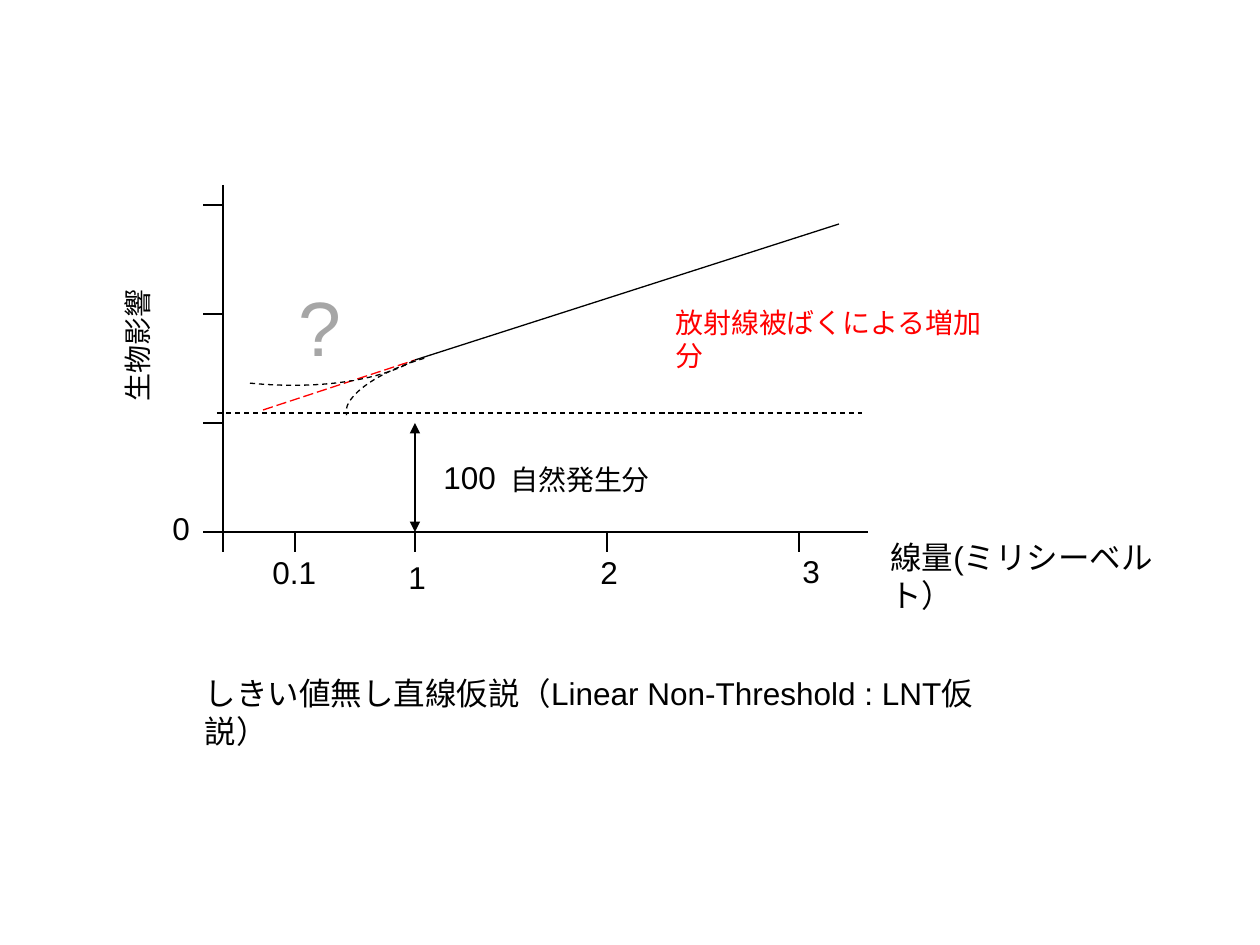
from dataclasses import dataclass

from lxml.etree import SubElement
from pptx import Presentation
from pptx.dml.color import RGBColor
from pptx.enum.dml import MSO_LINE
from pptx.enum.shapes import MSO_CONNECTOR, MSO_SHAPE
from pptx.enum.text import MSO_ANCHOR, MSO_AUTO_SIZE, PP_ALIGN
from pptx.oxml.ns import qn
from pptx.util import Emu, Pt


@dataclass(frozen=True)
class Theme:
    font: str = "Arial"
    ink: str = "000000"
    accent: str = "FF0000"
    muted: str = "A6A6A6"
    paper: str = "FFFFFF"
    label: int = 18
    note: int = 16
    mark: int = 44
    stroke: float = 0.75


THEME = Theme()
PX_PER_INCH = 126
X0, Y0 = 223, 532           # chart origin
X_END, Y_END = 868, 185     # ends of the axes
Y_STEP, X_STEP = 109, 192   # distance between ticks
X_ONE = 415                 # position of 1 on the dose axis
TICK = 20
LABEL_H, NOTE_H = 50, 47


def px(n):
    return Emu(round(n * 914400 / PX_PER_INCH))


def set_attrs(obj, values):
    for name, value in values.items():
        setattr(obj, name, value)


def style_line(line, color=THEME.ink, dash=None):
    line.color.rgb = RGBColor.from_string(color)
    set_attrs(line, {"width": Pt(THEME.stroke), "dash_style": dash})


def write(shape, text, size=THEME.label, color=THEME.ink, wrap=False,
          align=PP_ALIGN.LEFT, anchor=MSO_ANCHOR.TOP):
    tf = shape.text_frame
    set_attrs(tf, {"word_wrap": wrap, "vertical_anchor": anchor,
                   "auto_size": MSO_AUTO_SIZE.SHAPE_TO_FIT_TEXT})
    p = tf.paragraphs[0]
    p.alignment = align
    r = p.add_run()
    r.text = text
    set_attrs(r.font, {"name": THEME.font, "size": Pt(size)})
    r.font.color.rgb = RGBColor.from_string(color)


def add_label(shapes, text, box, rotation=0, **style):
    tb = shapes.add_textbox(*map(px, box))
    tb.rotation = rotation
    write(tb, text, **style)


def add_line(shapes, start, end, arrows=False, **style):
    line = shapes.add_connector(MSO_CONNECTOR.STRAIGHT, *map(px, start + end))
    style_line(line.line, **style)
    sp_pr = line._element.spPr
    if arrows:
        for tag in ("a:headEnd", "a:tailEnd"):
            SubElement(sp_pr.find(qn("a:ln")), qn(tag), type="triangle")
    SubElement(sp_pr, qn("a:effectLst"))


def add_outline(shapes, kind, box, rotation=0, **style):
    sp = shapes.add_shape(kind, *map(px, box))
    sp.rotation = rotation
    sp.shadow.inherit = False
    sp.fill.background()
    style_line(sp.line, **style)
    return sp


def add_axes(shapes):
    add_line(shapes, (X0, Y_END), (X0, Y0))
    add_line(shapes, (X0, Y0), (X_END, Y0))
    for i in range(4):
        y = Y0 - i * Y_STEP
        add_line(shapes, (X0, y), (X0 - TICK, y))
    for x in (X0, 295, *(X_ONE + i * X_STEP for i in range(3))):
        add_line(shapes, (x, Y0), (x, Y0 + TICK))

    # Axis numbers and titles
    for text, x, y, w in (("0", 160, 503, 43), ("0.1", 260, 547, 69),
                          ("1", 396, 552, 43), ("2", 588, 547, 43),
                          ("3", 790, 546, 43)):
        add_label(shapes, text, (x, y, w, LABEL_H))
    add_label(shapes, "生物影響", (68, 321, 139, NOTE_H), rotation=270, size=THEME.note)
    add_label(shapes, "線量(ミリシーベルト）", (878, Y0, 299, LABEL_H), wrap=True)


def add_natural_level(shapes):
    add_line(shapes, (217, 413), (862, 413), dash=MSO_LINE.DASH)
    add_line(shapes, (X_ONE, Y0 - Y_STEP), (X_ONE, Y0), arrows=True)
    add_label(shapes, "100", (431, 452, 78, LABEL_H))
    add_label(shapes, "自然発生分", (498, 456, 165, NOTE_H), size=THEME.note)


def add_dose_response(shapes):
    # Known straight part and its extension to low doses
    knee = (X_ONE, 360)
    add_line(shapes, knee, (839, 224))
    add_line(shapes, (263, 410), knee, color=THEME.accent, dash=MSO_LINE.LONG_DASH)
    add_label(shapes, "放射線被ばくによる増加分", (663, 299, 341, NOTE_H),
              size=THEME.note, color=THEME.accent, wrap=True)

    # Alternative low-dose curves
    threshold = add_outline(shapes, MSO_SHAPE.ARC, (343, 357, 181, 66),
                            rotation=343.8, dash=MSO_LINE.DASH)
    threshold._element.spPr.get_or_add_xfrm().set("flipH", "1")
    hormesis = add_outline(shapes, MSO_SHAPE.ARC, (180, 120, 155, 372),
                           rotation=95.7, dash=MSO_LINE.DASH)
    hormesis.adjustments[0] = 170.14

    # Open question
    question = add_outline(shapes, MSO_SHAPE.RECTANGLE, (285, 273, 69, 106),
                           color=THEME.paper)
    write(question, "?", size=THEME.mark, color=THEME.muted,
          align=PP_ALIGN.CENTER, anchor=MSO_ANCHOR.MIDDLE)


def add_title(s):
    title = s.shapes.title
    set_attrs(title, {"left": px(192), "top": px(668),
                      "width": px(811), "height": px(LABEL_H)})
    write(title, "しきい値無し直線仮説（Linear Non-Threshold : LNT仮説）", wrap=True)


def main():
    prs = Presentation()
    set_attrs(prs, {"slide_width": px(1260), "slide_height": px(945)})
    s = prs.slides.add_slide(prs.slide_layouts.get_by_name("Title Only"))
    add_axes(s.shapes)
    add_natural_level(s.shapes)
    add_dose_response(s.shapes)
    add_title(s)
    prs.save("out.pptx")


if __name__ == "__main__":
    main()
